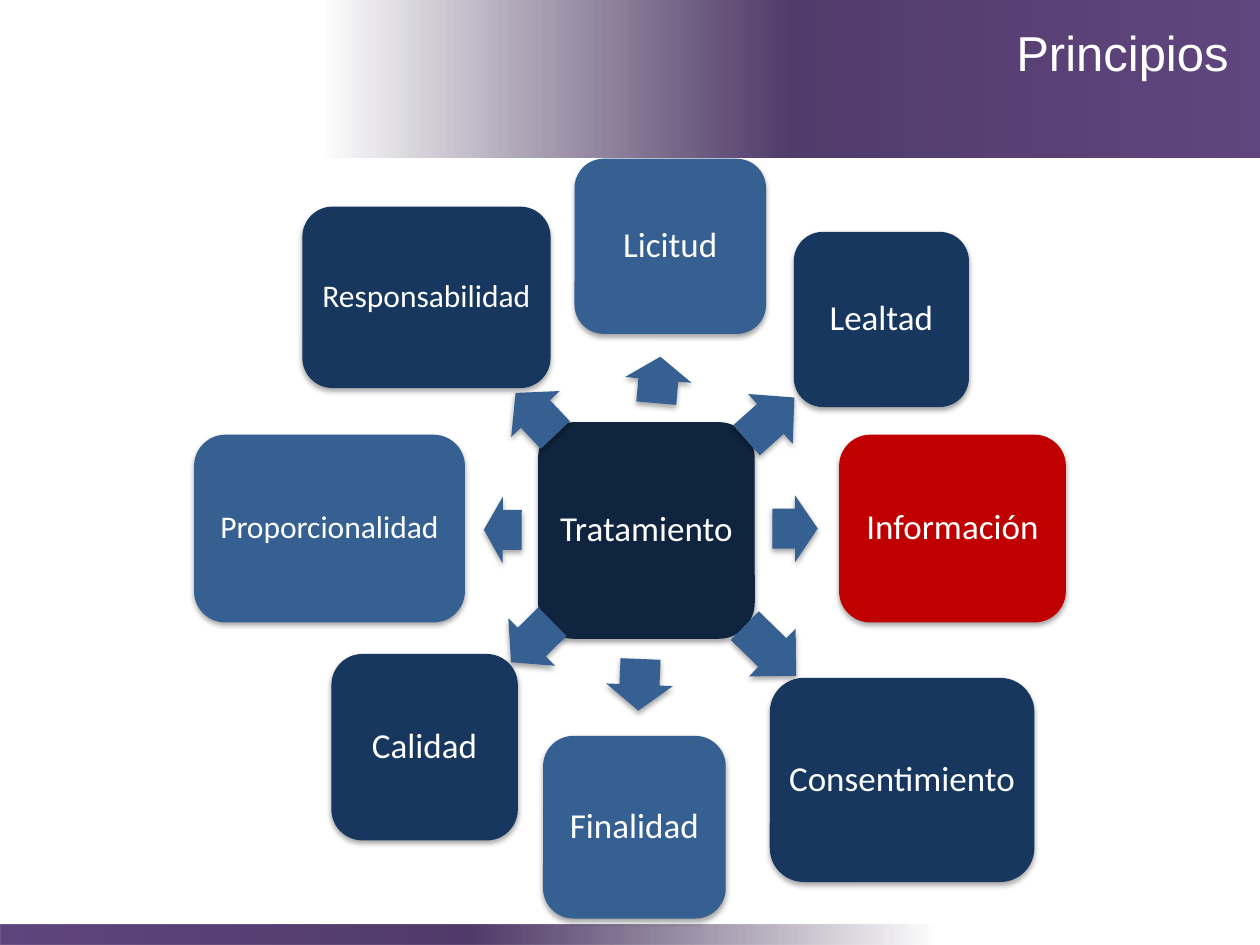
"""Build the slide on the principles that surround data processing."""
from dataclasses import dataclass

from lxml.etree import SubElement
from pptx import Presentation
from pptx.dml.color import RGBColor
from pptx.enum.shapes import MSO_SHAPE as Shape
from pptx.enum.text import MSO_ANCHOR as Anchor, PP_ALIGN as Align
from pptx.oxml.ns import qn
from pptx.util import Inches, Pt


@dataclass(frozen=True)
class Theme:
    title_font: str = "Arial"
    body_font: str = "Calibri"
    title_size: int = 28
    label_size: int = 20
    small_size: int = 18
    white: str = "FFFFFF"
    black: str = "000000"
    center: str = "0F243E"
    dark: str = "17375E"
    blue: str = "376092"
    red: str = "C00000"
    band_stops: tuple = ((0, "39294B", 0), (50, "513B6B", 100), (100, "60467E", 100))


THEME = Theme()
ARROW_HEIGHT = 0.53
CENTER_BOX = (4.27, 3.35, 1.72, 1.72)
PRINCIPLES = [
    ("Licitud", (4.56, 1.26, 1.52, 1.39), THEME.blue, THEME.label_size, (5.04, 2.75, 0.37), 275),
    ("Lealtad", (6.3, 1.84, 1.39, 1.39), THEME.dark, THEME.label_size, (5.86, 3.06, 0.51), 318.2),
    ("Información", (6.66, 3.45, 1.8, 1.49), THEME.red, THEME.label_size, (6.13, 3.93, 0.36), 359.7),
    ("Consentimiento", (6.11, 5.38, 2.1, 1.62), THEME.dark, THEME.label_size, (5.83, 4.9, 0.57), 44.3),
    ("Finalidad", (4.31, 5.84, 1.45, 1.45), THEME.blue, THEME.label_size, (4.87, 5.17, 0.41), 92.3),
    ("Calidad", (2.63, 5.19, 1.48, 1.48), THEME.dark, THEME.label_size, (3.99, 4.83, 0.46), 135.5),
    ("Proporcionalidad", (1.54, 3.45, 2.15, 1.49), THEME.blue, THEME.small_size, (3.84, 3.94, 0.3), 180.3),
    ("Responsabilidad", (2.4, 1.64, 1.97, 1.44), THEME.dark, THEME.small_size, (4.02, 3.02, 0.46), 226.6),
]


def add_color(parent, color, opacity):
    """Append a colour with an opacity in percent to an XML element."""
    element = SubElement(parent, qn("a:srgbClr"), val=color)
    SubElement(element, qn("a:alpha"), val=str(opacity * 1000))


def add_plain_shape(shapes, kind, box, rotation=0):
    """Add a shape without outline or shadow."""
    shape = shapes.add_shape(kind, *map(Inches, box))
    shape.rotation = rotation
    shape.line.fill.background()
    shape.shadow.inherit = False
    return shape


def add_band(shapes, box, rotation=0):
    """Add a purple band that fades out at one end."""
    band = add_plain_shape(shapes, Shape.RECTANGLE, box, rotation)
    band.fill.gradient()
    band.fill.gradient_angle = 0
    stops = band.element.spPr.find(f".//{qn('a:gsLst')}")
    for stop in list(stops):
        stops.remove(stop)
    for position, color, opacity in THEME.band_stops:
        stop = SubElement(stops, qn("a:gs"), pos=str(position * 1000))
        add_color(stop, color, opacity)


def add_shadowed_shape(shapes, kind, box, color, rotation=0):
    """Add a solid shape with a soft shadow below it."""
    shape = add_plain_shape(shapes, kind, box, rotation)
    shape.fill.solid()
    shape.fill.fore_color.rgb = RGBColor.from_string(color)
    shadow = SubElement(
        shape.element.spPr.find(qn("a:effectLst")), qn("a:outerShdw"),
        blurRad=str(Pt(3.1)), dist=str(Pt(1.8)), dir="5400000", rotWithShape="0",
    )
    add_color(shadow, THEME.black, 35)
    return shape


def format_paragraph(paragraph, font_name, size, alignment):
    """Set the white type and the alignment of a paragraph."""
    paragraph.alignment = alignment
    paragraph.font.name = font_name
    paragraph.font.size = Pt(size)
    paragraph.font.color.rgb = RGBColor.from_string(THEME.white)


def add_node(shapes, label, box, color, size):
    """Add a rounded box with a centred label."""
    node = add_shadowed_shape(shapes, Shape.ROUNDED_RECTANGLE, box, color)
    frame = node.text_frame
    frame.text = label
    frame.word_wrap = True
    frame.vertical_anchor = Anchor.MIDDLE
    frame.margin_left = frame.margin_right = Inches(0.03)
    frame.margin_top = frame.margin_bottom = Inches(0.03)
    paragraph = frame.paragraphs[0]
    format_paragraph(paragraph, THEME.body_font, size, Align.CENTER)
    paragraph.line_spacing = 0.9


def add_arrow(shapes, place, rotation):
    """Add a block arrow that points outwards."""
    box = (*place, ARROW_HEIGHT)
    arrow = add_shadowed_shape(shapes, Shape.RIGHT_ARROW, box, THEME.blue, rotation)
    arrow.adjustments[0] = 0.6
    arrow.adjustments[1] = 0.5


def set_title(slide, text):
    """Place the title at the right, in front of the header band."""
    title = slide.shapes.title
    title.left, title.top = Inches(7.13), Inches(0.13)
    title.width, title.height = Inches(2.72), Inches(0.95)
    title.text_frame.text = text
    title.text_frame.vertical_anchor = Anchor.TOP
    format_paragraph(title.text_frame.paragraphs[0], THEME.title_font, THEME.title_size, Align.RIGHT)
    title.element.getparent().append(title.element)


def main():
    """Build and save the presentation."""
    presentation = Presentation()
    presentation.slide_width, presentation.slide_height = Inches(10), Inches(7.5)
    slide = presentation.slides.add_slide(presentation.slide_layouts[5])
    add_band(slide.shapes, (2.58, 0, 7.42, 1.25))
    add_band(slide.shapes, (0, 7.34, 7.42, 0.16), 180)
    set_title(slide, "Principios")
    diagram = slide.shapes.add_group_shape().shapes
    add_node(diagram, "Tratamiento", CENTER_BOX, THEME.center, THEME.label_size)
    for label, box, color, size, arrow_place, angle in PRINCIPLES:
        add_arrow(diagram, arrow_place, angle)
        add_node(diagram, label, box, color, size)
    presentation.save("out.pptx")


if __name__ == "__main__":
    main()
